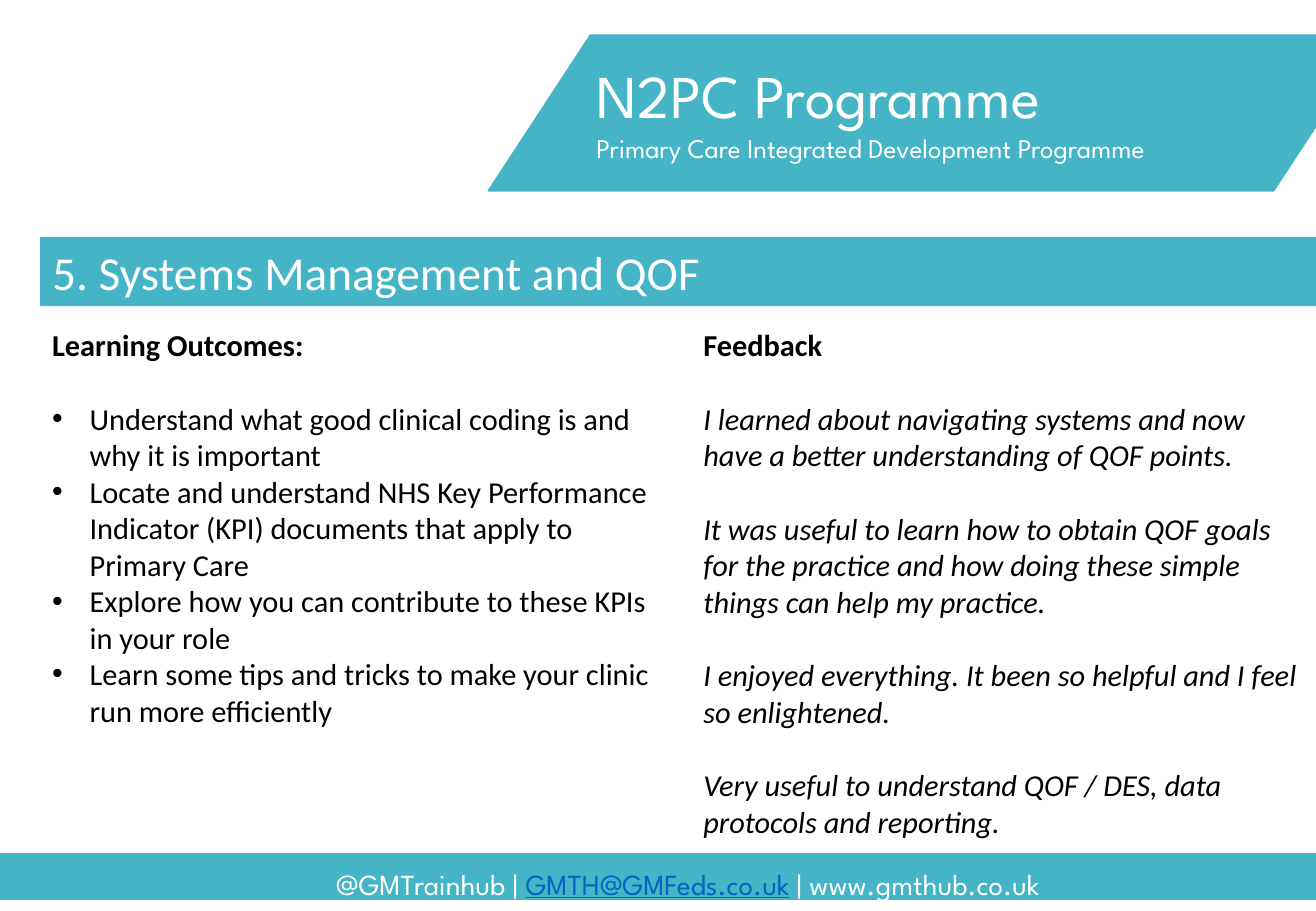
from pptx import Presentation
from pptx import util as u
from pptx.dml.color import RGBColor
from pptx.enum import shapes, text
from pptx.oxml.ns import qn
from lxml import etree

TEAL, WHITE, BLACK, BLUE = "45B4C6", "FFFFFF", "000000", "0563C1"
HEAD, BODY = "League Spartan", "Calibri"
GAP = 22  # one blank 18 pt line


def tint(target, color):
    target.rgb = RGBColor.from_string(color)


class Deck:
    def __init__(self, wide, high):
        self.prs = Presentation()
        self.prs.slide_width = u.Inches(wide)
        self.prs.slide_height = u.Inches(high)
        self.slide = self.prs.slides.add_slide(self.prs.slide_layouts[5])

    def paint(self, shape, color):
        shape.fill.solid()
        tint(shape.fill.fore_color, color)

    def place(self, shape, box):
        shape.left, shape.top, shape.width, shape.height = map(u.Inches, box)

    def style(self, run, size, font, color, bold=False, slant=False):
        face = run.font
        face.size, face.name = u.Pt(size), font
        face.bold, face.italic = bold, slant
        tint(face.color, color)

    def para(self, frame, words, size, font, color, gap=0, **look):
        """Fill the empty first paragraph, or add one below."""
        p = frame.paragraphs[0]
        if p.runs:
            p = frame.add_paragraph()
        p.text = words
        p.alignment = text.PP_ALIGN.LEFT
        p.space_before = u.Pt(gap)
        for run in p.runs:
            self.style(run, size, font, color, **look)
        return p

    def bullet(self, p):
        props = p._p.get_or_add_pPr()
        props.set("marL", str(u.Inches(0.31)))
        props.set("indent", str(-u.Inches(0.31)))
        etree.SubElement(props, qn("a:buFont")).set("typeface", "Arial")
        etree.SubElement(props, qn("a:buChar")).set("char", "•")

    def title(self, words, box):
        shape = self.slide.shapes.title
        self.place(shape, box)
        self.paint(shape, TEAL)
        frame = shape.text_frame
        frame.auto_size = text.MSO_AUTO_SIZE.NONE
        frame.vertical_anchor = text.MSO_ANCHOR.TOP
        self.para(frame, words, 28, BODY, WHITE)

    def band(self, kind, box):
        shape = self.slide.shapes.add_shape(kind, *map(u.Inches, box))
        shape.shadow.inherit = False
        self.paint(shape, TEAL)
        tint(shape.line.color, TEAL)
        shape.line.width = u.Pt(1)
        return shape

    def label(self, box):
        shape = self.slide.shapes.add_textbox(*map(u.Inches, box))
        shape.text_frame.word_wrap = True
        return shape

    def column(self, left, head, items, dots=False, slant=False):
        shape = self.label((left, 2.64, 5.16, 4.34))
        self.paint(shape, WHITE)
        frame = shape.text_frame
        self.para(frame, head, 18, BODY, BLACK, bold=True)
        for i, item in enumerate(items):
            gap = 0 if dots and i else GAP
            p = self.para(frame, item, 18, BODY, BLACK, gap, slant=slant)
            if dots:
                self.bullet(p)


def main():
    deck = Deck(10.83, 7.5)

    # Section title
    deck.title("5. Systems Management and QOF", (0.33, 1.95, 10.52, 0.57))

    # Footer
    deck.band(shapes.MSO_SHAPE.RECTANGLE, (0, 7.03, 11.32, 0.37))
    foot = deck.label((0, 6.94, 11.32, 0.5)).text_frame.paragraphs[0]
    foot.alignment = text.PP_ALIGN.CENTER
    foot.line_spacing = 1.5
    for words, color in (("@GMTrainhub | ", WHITE), ("GMTH@GMFeds.co.uk", BLUE),
                         (" | www.gmthub.co.uk", WHITE)):
        run = foot.add_run()
        run.text = words
        deck.style(run, 17.3, HEAD, color)
        run.font.underline = color == BLUE

    # Programme banner
    banner = deck.band(shapes.MSO_SHAPE.PARALLELOGRAM, (4.02, 0.29, 7.3, 1.28))
    banner.adjustments[0] = 0.655
    frame = deck.label((4.81, 0.43, 5.65, 1.01)).text_frame
    deck.para(frame, "N2PC Programme", 36, HEAD, WHITE)
    deck.para(frame, "Primary Care Integrated Development Programme",
              16, HEAD, WHITE)

    # Two columns
    deck.column(0.33, "Learning Outcomes:", [
        "Understand what good clinical coding is and why it is important",
        "Locate and understand NHS Key Performance Indicator (KPI) documents "
        "that apply to Primary Care",
        "Explore how you can contribute to these KPIs in your role",
        "Learn some tips and tricks to make your clinic run more efficiently",
    ], dots=True)
    deck.column(5.69, "Feedback", [
        "I learned about navigating systems and now have a better "
        "understanding of QOF points.",
        "It was useful to learn how to obtain QOF goals for the practice and "
        "how doing these simple things can help my practice.",
        "I enjoyed everything. It been so helpful and I feel so enlightened.",
        "Very useful to understand QOF / DES, data protocols and reporting.",
    ], slant=True)

    deck.prs.save("out.pptx")


if __name__ == "__main__":
    main()
